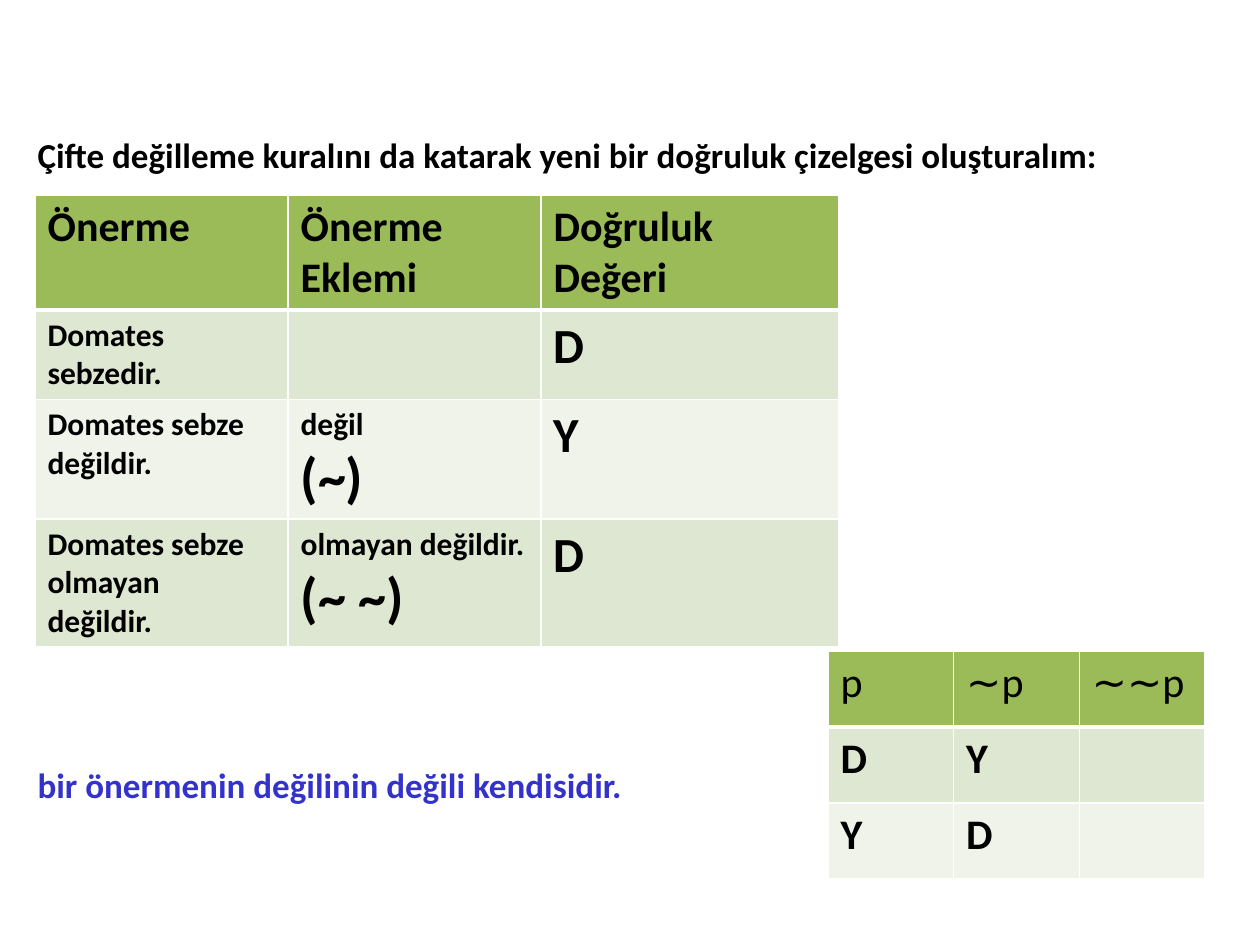
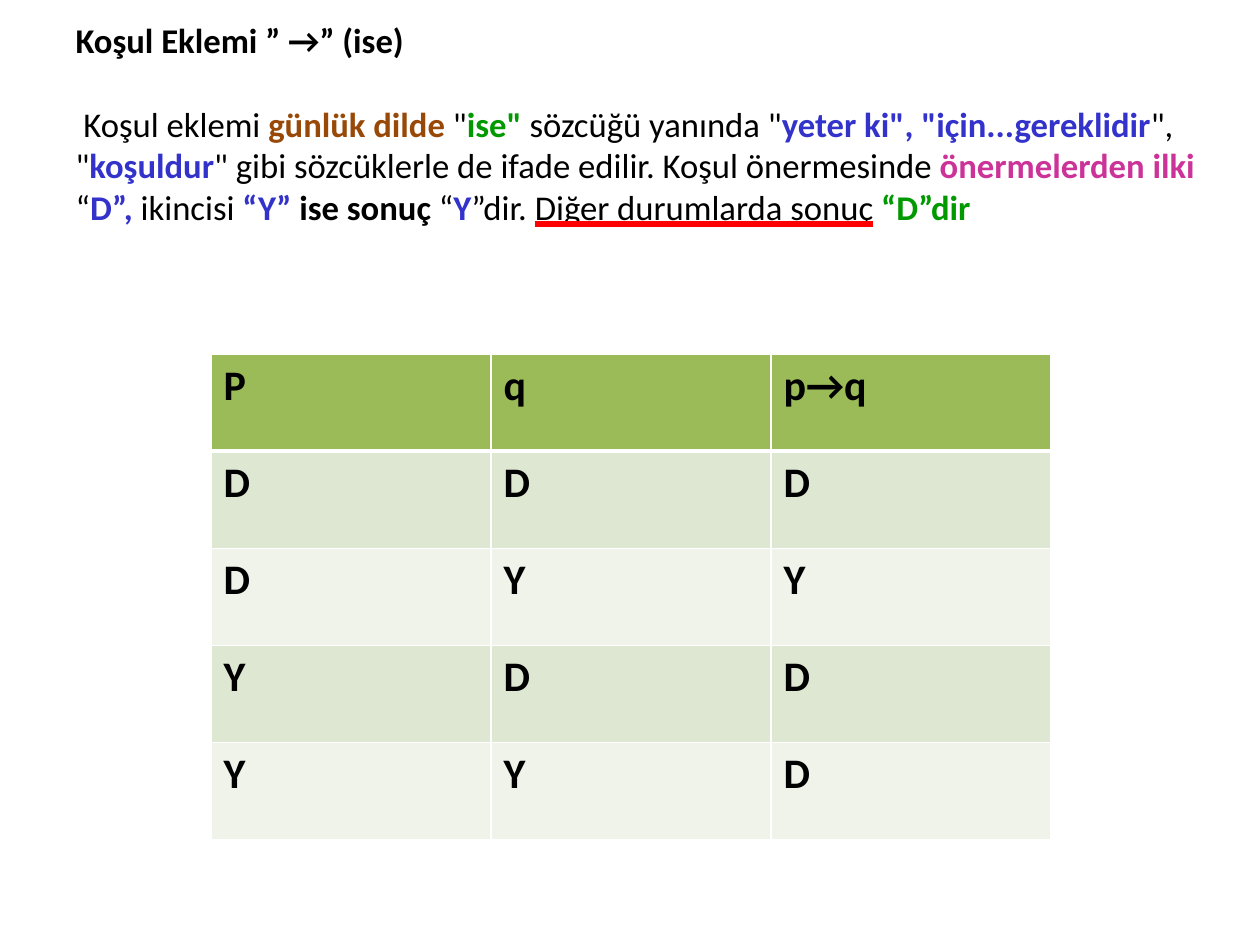
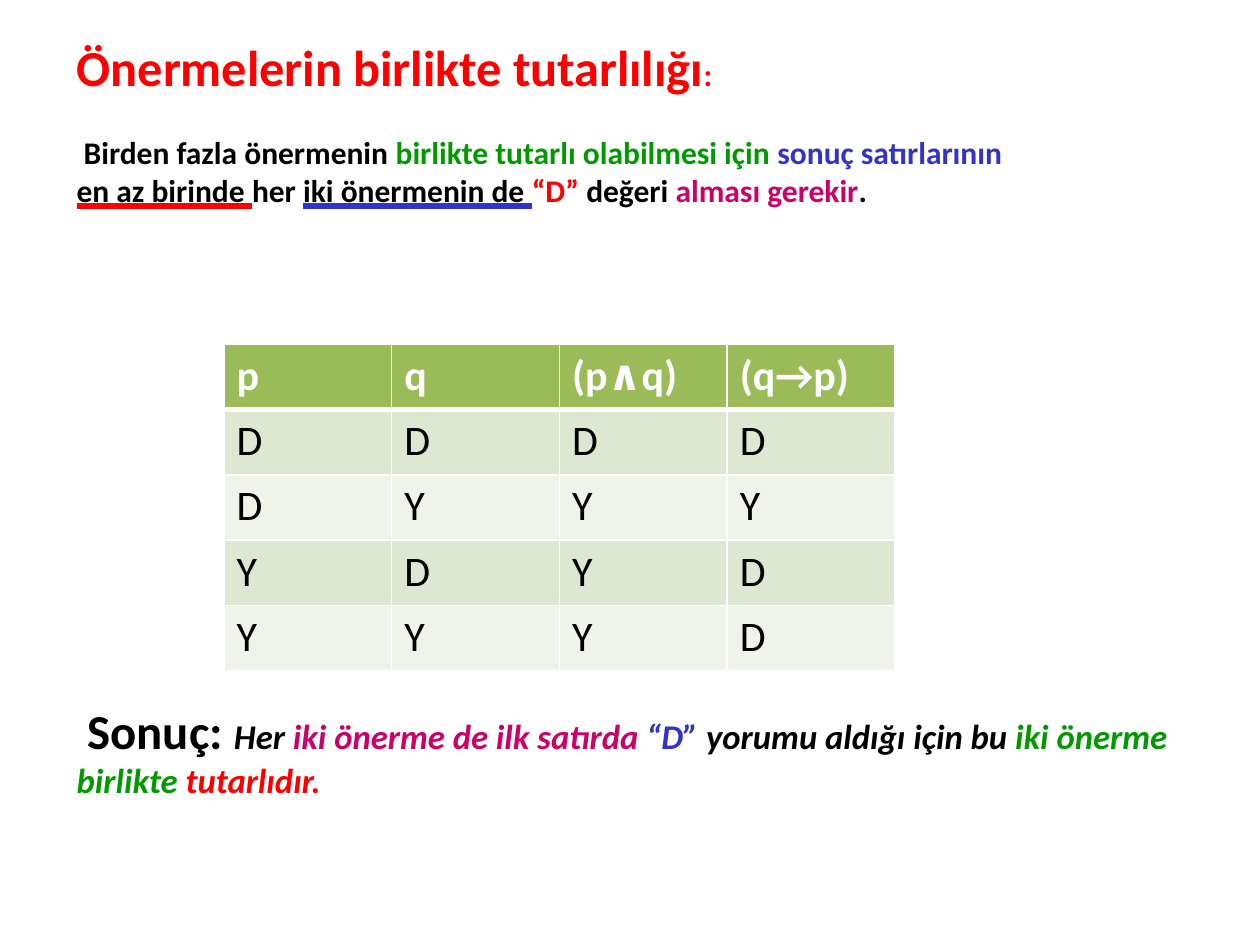
"""Build three slides on truth tables, each a title text with banded tables."""
import pptx
import pptx.util
import pptx.dml.color
import pptx.enum.text
import pptx.oxml
import pptx.oxml.ns

RGB = pptx.dml.color.RGBColor
BLACK = RGB(0x00, 0x00, 0x00)
WHITE = RGB(0xFF, 0xFF, 0xFF)
BLUE = RGB(0x33, 0x33, 0xCC)
GREEN = RGB(0x00, 0x99, 0x00)
RED = RGB(0xFF, 0x00, 0x00)
BROWN = RGB(0x98, 0x48, 0x07)
PINK = RGB(0xCC, 0x33, 0x99)
ROSE = RGB(0xCC, 0x00, 0x66)
HEAD = RGB(0x9B, 0xBB, 0x59)
BANDS = RGB(0xDE, 0xE7, 0xD1), RGB(0xEF, 0xF3, 0xEA)
FONT = "Calibri"
SCALE = 914400 / 126
Pt = pptx.util.Pt
ANCHOR = pptx.enum.text.MSO_ANCHOR
LEFT = pptx.enum.text.PP_ALIGN.LEFT
HEAVY = pptx.enum.text.MSO_UNDERLINE.HEAVY_LINE

# Marks: b bold, i italic, r red underline, u blue underline.
DECK = [
    {
        "box": (25, 38, 1172, 862), "anchor": ANCHOR.TOP, "pads": (95, 0),
        "text": [
            (20, 0, [("Çifte değilleme kuralını da katarak yeni bir doğruluk "
                      "çizelgesi oluşturalım:", BLACK, "b")]),
            (20, 336, [("bir önermenin değilinin değili kendisidir.", BLUE, "b")]),
        ],
        "tables": [
            {
                "box": (35, 195, 804, 445), "cols": (253, 253, 298),
                "rows": (102, 67, 102, 102), "head": (BLACK, "b"), "body": "b",
                "cells": [
                    ["Önerme", "Önerme Eklemi", "Doğruluk Değeri"],
                    [[("Domates sebzedir.", 18)], "", [("D", 28)]],
                    [[("Domates sebze değildir.", 18)],
                     [("değil", 18), ("(~)", 32)], [("Y", 28)]],
                    [[("Domates sebze olmayan", 18), ("değildir.", 18)],
                     [("olmayan değildir.", 18), ("(~ ~)", 32)], [("D", 28)]],
                ],
            },
            {
                "box": (828, 651, 377, 228), "head": (BLACK, ""), "body": "b",
                "cells": [["p", "∼p", "∼∼p"], ["D", "Y", ""], ["Y", "D", ""]],
            },
        ],
    },
    {
        "box": (63, 38, 1162, 207), "anchor": ANCHOR.MIDDLE, "pads": (0, 37),
        "text": [
            (19.8, 0, [("Koşul Eklemi ” →” (ise)", BLACK, "b")]),
            (19.8, 24, [
                (" Koşul eklemi ", BLACK, ""),
                ("günlük dilde ", BROWN, "b"),
                ("\"", BLACK, ""),
                ("ise\" ", GREEN, "b"),
                ("sözcüğü yanında \"", BLACK, ""),
                ("yeter ki\", \"için...gereklidir", BLUE, "b"),
                ("\", \"", BLACK, ""),
                ("koşuldur", BLUE, "b"),
                ("\" gibi sözcüklerle de ifade edilir. Koşul önermesinde ", BLACK, ""),
                ("önermelerden ilki ", PINK, "b"),
                ("“", BLACK, ""),
                ("D”, ", BLUE, "b"),
                ("ikincisi ", BLACK, ""),
                ("“Y” ", BLUE, "b"),
                ("ise sonuç ", BLACK, "b"),
                ("“", BLACK, ""),
                ("Y", BLUE, "b"),
                ("”dir. ", BLACK, ""),
                ("Diğer durumlarda sonuç", BLACK, "r"),
                (" ", BLACK, ""),
                ("“D”dir", GREEN, "b"),
            ]),
        ],
        "tables": [
            {
                "box": (211, 354, 840, 486), "head": (BLACK, "b"), "body": "b",
                "cells": [["P", "q", "p→q"], *map(list, ("DDD", "DYY", "YDD", "YYD"))],
            },
        ],
    },
    {
        "box": (64, 36, 1134, 871), "anchor": ANCHOR.TOP, "pads": (0, 0),
        "text": [
            (28.8, 0, [("Önermelerin birlikte tutarlılığı", RED, "b"),
                       (":", RED, "b", 18)]),
            (18, 21, [
                (" Birden fazla önermenin ", BLACK, "b"),
                ("birlikte tutarlı olabilmesi için ", GREEN, "b"),
                ("sonuç satırlarının", BLUE, "b"),
            ]),
            (18, 0, [
                ("en az birinde ", BLACK, "br"),
                ("her ", BLACK, "b"),
                ("iki önermenin de ", BLACK, "bu"),
                ("“D”", RED, "b"),
                (" değeri ", BLACK, "b"),
                ("alması gerekir", ROSE, "b"),
                (".", BLACK, "b"),
            ]),
            (19.8, 281, [
                (" Sonuç: ", BLACK, "b", 27.9),
                ("Her ", BLACK, "bi"),
                ("iki önerme de ilk satırda", ROSE, "bi"),
                (" “D” ", BLUE, "bi"),
                ("yorumu aldığı için bu ", BLACK, "bi"),
                ("iki önerme birlikte ", GREEN, "bi"),
                ("tutarlıdır.", RED, "bi"),
            ]),
        ],
        "tables": [
            {
                "box": (224, 344, 671, 327), "head": (WHITE, "b"), "body": "",
                "cells": [["p", "q", "(p∧q)", "(q→p)"],
                          *map(list, ("DDDD", "DYYY", "YDYD", "YYYD"))],
            },
        ],
    },
]


def px(size):
    return round(size * SCALE)


def style(item, values):
    for name, value in values.items():
        setattr(item, name, value)


def write(para, size, text, color, marks):
    run = para.add_run()
    run.text = text
    style(run.font, {"name": FONT, "size": Pt(size),
                     "bold": "b" in marks, "italic": "i" in marks})
    run.font.color.rgb = color
    for mark, line in (("r", RED), ("u", BLUE)):
        if mark in marks:
            run.font.underline = HEAVY
            fill = pptx.oxml.parse_xml(
                f'<a:uFill {pptx.oxml.ns.nsdecls("a")}><a:solidFill>'
                f'<a:srgbClr val="{line}"/></a:solidFill></a:uFill>')
            run.font._element.find(pptx.oxml.ns.qn("a:solidFill")).addnext(fill)


def add_para(frame, index):
    return frame.paragraphs[0] if index == 0 else frame.add_paragraph()


def place(shape, box):
    style(shape, dict(zip(("left", "top", "width", "height"), map(px, box))))


def add_title(slide, data):
    title = slide.shapes.title
    place(title, data["box"])
    frame = title.text_frame
    top, low = data["pads"]
    style(frame, {"word_wrap": True, "auto_size": pptx.enum.text.MSO_AUTO_SIZE.NONE,
                  "vertical_anchor": data["anchor"],
                  "margin_top": px(top), "margin_bottom": px(low)})
    for index, (size, gap, runs) in enumerate(data["text"]):
        para = add_para(frame, index)
        style(para, {"alignment": LEFT, "space_before": Pt(gap)})
        for text, color, marks, *own in runs:
            write(para, own[0] if own else size, text, color, marks)


def edge(cell, row):
    widths = {"L": 1, "R": 1, "T": 3 if row == 1 else 1, "B": 3 if row == 0 else 1}
    for side, width in widths.items():
        cell._tc.get_or_add_tcPr().append(pptx.oxml.parse_xml(
            f'<a:ln{side} {pptx.oxml.ns.nsdecls("a")} w="{Pt(width)}"><a:solidFill>'
            f'<a:srgbClr val="{WHITE}"/></a:solidFill></a:ln{side}>'))


def add_grid(slide, data):
    cells, box = data["cells"], data["box"]
    high, wide = len(cells), len(cells[0])
    shape = slide.shapes.add_table(high, wide, *map(px, box))
    table = shape.table
    table.horz_banding = False
    for col, width in zip(table.columns, data.get("cols", [box[2] / wide] * wide)):
        col.width = px(width)
    for row, height in zip(table.rows, data.get("rows", [box[3] / high] * high)):
        row.height = px(height)
    place(shape, box)
    for r, line in enumerate(cells):
        color, marks = (BLACK, data["body"]) if r else data["head"]
        for c, item in enumerate(line):
            cell = table.cell(r, c)
            edge(cell, r)
            cell.fill.solid()
            cell.fill.fore_color.rgb = BANDS[(r - 1) % 2] if r else HEAD
            parts = [(item, 24)] if isinstance(item, str) else item
            for index, (text, size) in enumerate(parts):
                if text:
                    write(add_para(cell.text_frame, index), size, text, color, marks)


def main():
    deck = pptx.Presentation()
    style(deck, {"slide_width": px(1260), "slide_height": px(945)})
    for data in DECK:
        slide = deck.slides.add_slide(deck.slide_layouts[5])
        add_title(slide, data)
        for grid in data["tables"]:
            add_grid(slide, grid)
    deck.save("out.pptx")


if __name__ == "__main__":
    main()
